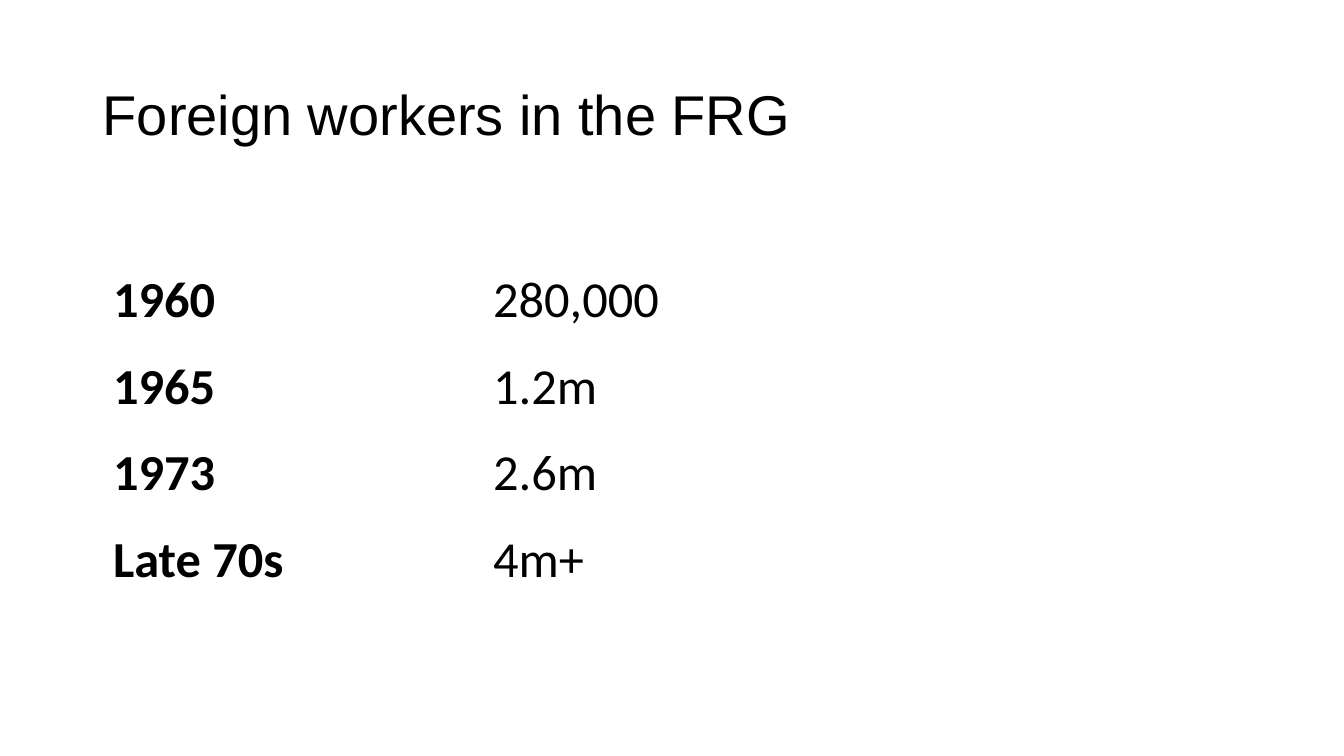
from lxml import etree
from pptx import Presentation
from pptx.dml.color import RGBColor
from pptx.enum.text import MSO_ANCHOR
from pptx.oxml.ns import qn
from pptx.util import Cm, Pt

BLACK = RGBColor(0, 0, 0)
WHITE = RGBColor(255, 255, 255)
MIDDLE = MSO_ANCHOR.MIDDLE
TOP = MSO_ANCHOR.TOP

TITLE_FORMAT = {"name": "Arial", "size": Pt(40), "bold": False}
YEAR_FORMAT = {"name": "Calibri", "size": Pt(36), "bold": True}
COUNT_FORMAT = {**YEAR_FORMAT, "bold": False}
CELL_FORMAT = {
    "margin_left": Cm(0.18),
    "margin_right": Cm(0.18),
    "margin_top": 0,
    "margin_bottom": 0,
    "vertical_anchor": TOP,
}
WORKERS = [
    ("1960", "280,000"),
    ("1965", "1.2m"),
    ("1973", "2.6m"),
    ("Late 70s", "4m+"),
]


def set_attributes(target, values):
    for name, value in values.items():
        setattr(target, name, value)


def write_text(tf, text, font_format):
    r = tf.paragraphs[0].add_run()
    r.text = text
    set_attributes(r.font, font_format)
    r.font.color.rgb = BLACK


def add_title(slide, text):
    sp = slide.shapes.add_textbox(Cm(2.34), Cm(1.88), Cm(18.42), Cm(1.96))
    tf = sp.text_frame
    set_attributes(tf, {"word_wrap": True, "vertical_anchor": MIDDLE})
    write_text(tf, text, TITLE_FORMAT)


def add_border(cell, side, width):
    ln = etree.SubElement(cell._tc.get_or_add_tcPr(), qn(f"a:{side}"), w=str(Pt(width)))
    fill = etree.SubElement(ln, qn("a:solidFill"))
    etree.SubElement(fill, qn("a:srgbClr"), val=str(WHITE))


def format_cell(cell, text, font_format, bottom_width):
    set_attributes(cell, CELL_FORMAT)
    for side, width in {"lnL": 1, "lnR": 1, "lnT": 1, "lnB": bottom_width}.items():
        add_border(cell, side, width)
    cell.fill.background()
    write_text(cell.text_frame, text, font_format)


def add_workers_table(slide, rows):
    frame = slide.shapes.add_table(
        len(rows), 2, Cm(2.67), Cm(6.78), Cm(17.78), Cm(8.76)
    )
    table = frame.table
    set_attributes(table, {"first_row": False, "horz_banding": False})
    for column, width in zip(table.columns, (Cm(9.58), Cm(8.2))):
        column.width = width
    for i, row in enumerate(rows):
        bottom_width = 3 if i == 0 else 1
        for j, font_format in enumerate((YEAR_FORMAT, COUNT_FORMAT)):
            format_cell(table.cell(i, j), row[j], font_format, bottom_width)


def main():
    prs = Presentation()
    prs.slide_width = Cm(33.87)
    prs.slide_height = Cm(19.05)
    slide = prs.slides.add_slide(prs.slide_layouts[6])
    add_workers_table(slide, WORKERS)
    add_title(slide, "Foreign workers in the FRG")
    prs.save("out.pptx")


if __name__ == "__main__":
    main()
